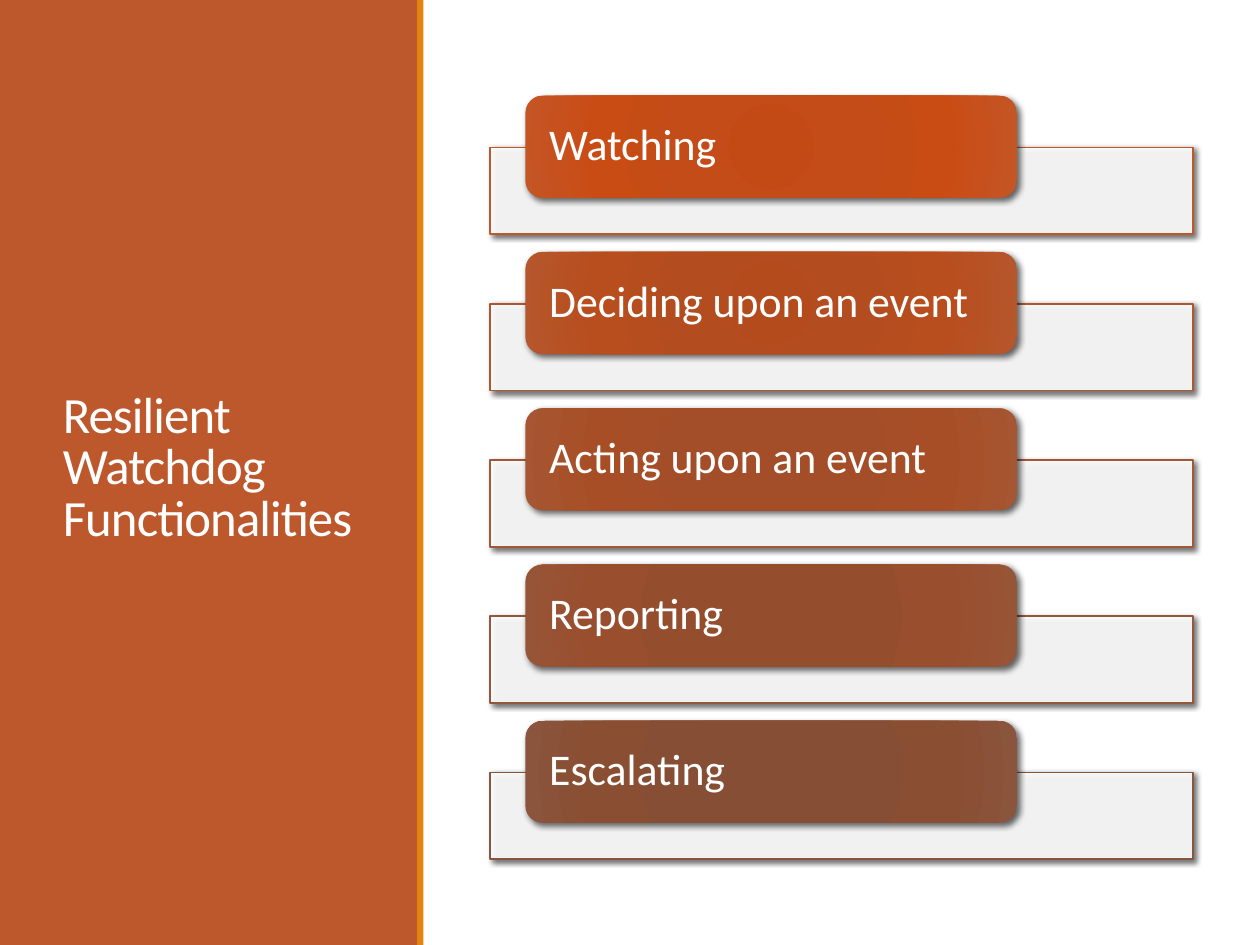
import pptx
import pptx.util
import pptx.oxml
import pptx.oxml.ns
import pptx.dml.color
import pptx.enum.shapes
import pptx.enum.text

Inches = pptx.util.Inches
Pt = pptx.util.Pt
KIND = pptx.enum.shapes.MSO_SHAPE
NS = pptx.oxml.ns.nsdecls("a")

RUST, AMBER, WHITE = "BD582C", "E48312", "FFFFFF"
STOPS = (0, 34, 70, 100)
STEPS = [
    ("Watching", "BD582C", ("C44A15", "C34C18", "C94C15", "C45525")),
    ("Deciding upon an event", "AE5832", ("B44B1D", "B34D20", "B84D1E", "B5562C")),
    ("Acting upon an event", "A05837", ("A44C25", "A34E28", "A84E26", "A65632")),
    ("Reporting", "93573C", ("954C2C", "944E2E", "994E2D", "975538")),
    ("Escalating", "865640", ("874C32", "864E34", "8A4E33", "8A553C")),
]


def color(code):
    return pptx.dml.color.RGBColor.from_string(code)


class Deck:
    """Holds the text style and the current slide."""

    font = "Calibri"
    ink = WHITE

    def __init__(self, slide):
        self.slide = slide

    def block(self, kind, box, fill):
        shape = self.slide.shapes.add_shape(kind, *map(Inches, box))
        shape.shadow.inherit = False
        shape.fill.solid()
        shape.fill.fore_color.rgb = color(fill)
        shape.line.fill.background()
        return shape

    def shade(self, shape, blur, dist):
        """Add a soft shadow falling to the lower right."""
        shape._element.spPr.find(pptx.oxml.ns.qn("a:effectLst")).append(
            pptx.oxml.parse_xml(
                f'<a:outerShdw {NS} blurRad="{Pt(blur)}" dist="{Pt(dist)}"'
                ' dir="2700000" rotWithShape="0"><a:srgbClr val="000000">'
                '<a:alpha val="60000"/></a:srgbClr></a:outerShdw>'))

    def bar(self, box, line):
        """Draw a faint white bar with a thin outline."""
        shape = self.block(KIND.RECTANGLE, box, WHITE)
        shape.line.color.rgb = color(line)
        shape.line.width = Pt(1)
        tint = shape._element.spPr.find(pptx.oxml.ns.qn("a:solidFill"))[0]
        tint.append(pptx.oxml.parse_xml(f'<a:alpha {NS} val="90000"/>'))
        self.shade(shape, 3, 2)

    def label(self, box, text, tones):
        """Draw a rounded label with a radial gradient."""
        shape = self.block(KIND.ROUNDED_RECTANGLE, box, tones[0])
        stops = "".join(
            f'<a:gs pos="{pos * 1000}"><a:srgbClr val="{tone}"/></a:gs>'
            for pos, tone in zip(STOPS, tones))
        props = shape._element.spPr
        props.replace(props.find(pptx.oxml.ns.qn("a:solidFill")), pptx.oxml.parse_xml(
            f'<a:gradFill {NS} rotWithShape="1"><a:gsLst>{stops}</a:gsLst>'
            '<a:path path="circle"><a:fillToRect l="100000" t="100000"'
            ' r="100000" b="100000"/></a:path></a:gradFill>'))
        self.shade(shape, 3.5, 2)
        frame = shape.text_frame
        frame.margin_left = frame.margin_right = Inches(0.15)
        frame.margin_top = frame.margin_bottom = 0
        self.put(frame, text, 25, 0.9)

    def title(self, box, text):
        frame = self.slide.shapes.add_textbox(*map(Inches, box)).text_frame
        run = self.put(frame, text, 29, 0.85)
        run.font._element.set("spc", "-50")

    def put(self, frame, text, size, space):
        """Fill a frame with one styled run and return the run."""
        frame.word_wrap = True
        frame.vertical_anchor = pptx.enum.text.MSO_ANCHOR.MIDDLE
        para = frame.paragraphs[0]
        para.alignment = pptx.enum.text.PP_ALIGN.LEFT
        para.line_spacing = space
        run = para.add_run()
        run.text = text
        run.font.name = self.font
        run.font.size = Pt(size)
        run.font.color.rgb = color(self.ink)
        return run


def main():
    show = pptx.Presentation()
    show.slide_width, show.slide_height = Inches(10), Inches(7.5)
    deck = Deck(show.slides.add_slide(show.slide_layouts[6]))

    deck.block(KIND.RECTANGLE, (0, 0, 3.32, 7.5), RUST)
    deck.title((0.4, 0.57, 2.53, 6.31), "Resilient Watchdog Functionalities")
    deck.block(KIND.RECTANGLE, (3.31, 0, 0.05, 7.5), AMBER)

    for row, (text, line, tones) in enumerate(STEPS):
        top = 0.76 + row * 1.24
        deck.bar((3.89, top + 0.41, 5.58, 0.69), line)
        deck.label((4.17, top, 3.9, 0.81), text, tones)

    show.save("out.pptx")


if __name__ == "__main__":
    main()
